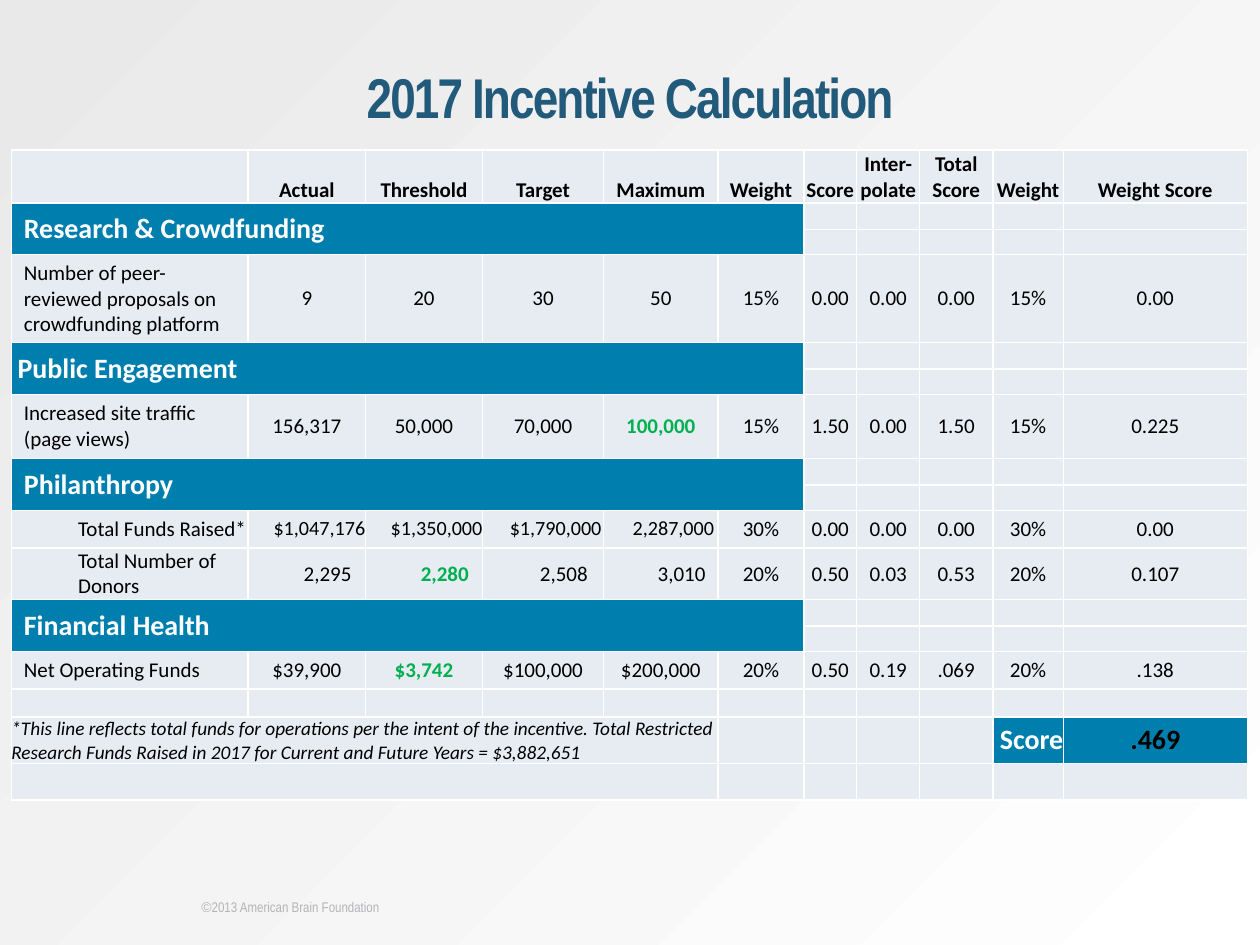
from lxml import etree
from pptx import Presentation
from pptx.dml.color import RGBColor
from pptx.enum.text import MSO_ANCHOR, PP_ALIGN
from pptx.oxml.ns import qn
from pptx.util import Inches, Pt

LEFT, MID, RIGHT = PP_ALIGN.LEFT, PP_ALIGN.CENTER, PP_ALIGN.RIGHT
TOP, HALF, LOW = MSO_ANCHOR.TOP, MSO_ANCHOR.MIDDLE, MSO_ANCHOR.BOTTOM
HUES = {"pale": "E7ECF2", "blue": "007FAE", "navy": "225A7B", "green": "00B050",
        "gray": "B4B4B6", "fog": "E9E9EA", "white": "FFFFFF", "black": "000000"}
COLS = [1.88, 0.93, 0.93, 0.96, 0.91, 0.68, 0.42, 0.5, 0.58, 0.56, 1.46]
ROWS = [0.42, 0.21, 0.2, 0.7, 0.21, 0.2, 0.51, 0.21, 0.2, 0.3, 0.41,
        0.21, 0.2, 0.3, 0.22, 0.37, 0.29]
HEADS = ["Actual", "Threshold", "Target", "Maximum", "Weight", "Score",
         "Inter-polate", "Total Score", "Weight", "Weight Score"]
BANDS = {1: ("Research & Crowdfunding", 0.1), 4: ("Public Engagement", 0.05),
         7: ("Philanthropy", 0.1), 11: ("Financial Health", 0.1)}
DATA = {
    3: ["Number of peer-reviewed proposals on crowdfunding platform", "9", "20", "30", "50",
        "15%", "0.00", "0.00", "0.00", "15%", "0.00"],
    6: ["Increased site traffic (page views)", "156,317", "50,000", "70,000", "100,000",
        "15%", "1.50", "0.00", "1.50", "15%", "0.225"],
    9: ["Total Funds Raised*", "$1,047,176", "$1,350,000", "$1,790,000", "2,287,000",
        "30%", "0.00", "0.00", "0.00", "30%", "0.00"],
    10: ["Total Number of Donors", "2,295", "2,280", "2,508", "3,010",
         "20%", "0.50", "0.03", "0.53", "20%", "0.107"],
    13: ["Net Operating Funds", "$39,900", "$3,742", "$100,000", "$200,000",
         "20%", "0.50", "0.19", ".069", "20%", ".138"],
}
INSETS = {9: 0.2, 10: 0.33}
HITS = {(6, 4), (10, 2), (13, 2)}
NOTE = ("*This line reflects total funds for operations per the intent of the incentive. "
        "Total Restricted Research Funds Raised in 2017 for Current and Future Years = $3,882,651")


def rgb(hue):
    return RGBColor.from_string(HUES[hue])


def write(frame, text, size=12, hue="black", face="Calibri", bold=False,
          slant=False, align=LEFT):
    line = frame.paragraphs[0]
    line.alignment = align
    run = line.add_run()
    run.text = text
    font = run.font
    font.size, font.name, font.bold, font.italic = Pt(size), face, bold, slant
    font.color.rgb = rgb(hue)
    return run


class Deck:
    def __init__(self):
        self.prs = Presentation()
        self.prs.slide_width, self.prs.slide_height = Inches(10), Inches(7.5)
        self.slide = self.prs.slides.add_slide(self.prs.slide_layouts[6])

    def back(self, start, end):
        fill = self.slide.background.fill
        fill.gradient()
        for stop, hue, spot in zip(fill.gradient_stops, (start, end), (0, 1)):
            stop.color.rgb = rgb(hue)
            stop.position = spot
        grad = next(self.slide._element.iter(qn("a:gradFill")))
        grad.remove(grad.find(qn("a:lin")))
        ring = etree.SubElement(grad, qn("a:path"), path="circle")
        etree.SubElement(ring, qn("a:fillToRect"), l="100000", t="100000")

    def text(self, box, text, wrap=True, **style):
        frame = self.slide.shapes.add_textbox(*map(Inches, box)).text_frame
        frame.word_wrap = wrap
        frame.vertical_anchor = TOP
        return frame.paragraphs[0], write(frame, text, **style)

    def table(self, left, top):
        shape = self.slide.shapes.add_table(
            len(ROWS), len(COLS), Inches(left), Inches(top),
            Inches(sum(COLS)), Inches(sum(ROWS)))
        self.grid = shape.table
        self.grid.horz_banding = self.grid.first_row = False
        for col, size in zip(self.grid.columns, COLS):
            col.width = Inches(size)
        for row, size in zip(self.grid.rows, ROWS):
            row.height = Inches(size)
        for cell in self.grid.iter_cells():
            self.plain(cell)

    def plain(self, cell):
        cell.margin_left = cell.margin_right = cell.margin_top = cell.margin_bottom = 0
        cell.fill.solid()
        cell.fill.fore_color.rgb = rgb("pale")
        props = cell._tc.get_or_add_tcPr()
        for spot, side in enumerate(("lnL", "lnR", "lnT", "lnB")):
            edge = etree.Element(qn("a:" + side), w="12700")
            fill = etree.SubElement(edge, qn("a:solidFill"))
            etree.SubElement(fill, qn("a:srgbClr"), val=HUES["white"])
            props.insert(spot, edge)
        etree.SubElement(cell.text_frame.paragraphs[0]._p, qn("a:endParaRPr"), sz="800")

    def cell(self, row, col, text, fill="pale", left=0, pad=0, anchor=HALF, **style):
        cell = self.grid.cell(row, col)
        cell.fill.fore_color.rgb = rgb(fill)
        cell.vertical_anchor = anchor
        cell.margin_left, cell.margin_right = Inches(left), Inches(pad)
        cell.margin_top = cell.margin_bottom = Inches(pad / 2)
        write(cell.text_frame, text, **style)

    def merge(self, row, col, last, end):
        self.grid.cell(row, col).merge(self.grid.cell(last, end))


def main():
    deck = Deck()
    deck.back("white", "fog")
    foot, mark = deck.text((1.5, 7.08, 1.96, 0.24), "©", wrap=False,
                           size=8, hue="gray", face="Arial")
    name = foot.add_run()
    name.text = "2013 American Brain Foundation"
    name.font.size, name.font.name = Pt(8), "Arial Narrow"
    name.font.color.rgb = rgb("gray")
    head, run = deck.text((0, 0.51, 10, 0.98), "2017 Incentive Calculation", size=32,
                          hue="navy", face="Arial Narrow", bold=True, align=MID)
    head.line_spacing = 0.9
    run.font._element.set("spc", "-110")

    deck.table(0.09, 1.19)
    for col, text in enumerate(HEADS, 1):
        deck.cell(0, col, text, anchor=LOW, bold=True, align=MID)
    for row, (text, left) in BANDS.items():
        deck.merge(row, 0, row + 1, 5)
        deck.cell(row, 0, text, fill="blue", left=left, size=16, hue="white", bold=True)
    for row, (label, *vals) in DATA.items():
        inset = INSETS.get(row, 0)
        deck.cell(row, 0, label, left=0.53 if inset else 0.1, pad=0 if inset else 0.1)
        for col, val in enumerate(vals, 1):
            hit = (row, col) in HITS
            deck.cell(row, col, val, left=inset if col < 5 else 0, align=MID, bold=hit,
                      hue="green" if hit else "black",
                      size=11.5 if row == 9 and col < 5 else 12)
    for row in (15, 16):
        deck.merge(row, 0, row, 4)
    deck.cell(15, 0, NOTE, anchor=LOW, size=11, slant=True)
    deck.cell(15, 9, "Score", fill="blue", size=16, hue="white", bold=True, align=RIGHT)
    deck.cell(15, 10, ".469", fill="blue", size=16, bold=True, align=MID)
    deck.prs.save("out.pptx")


if __name__ == "__main__":
    main()
